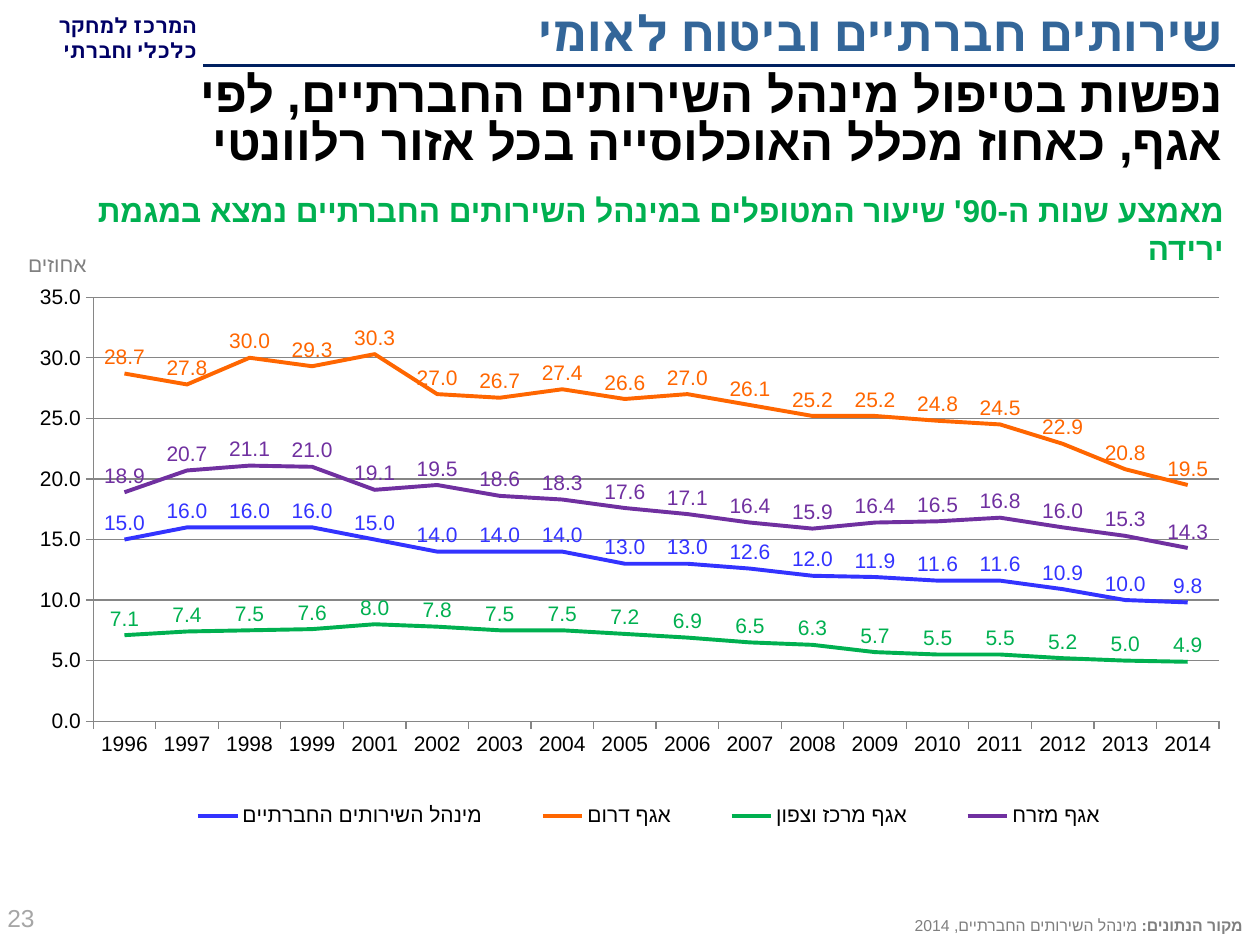
from lxml import etree
from pptx import Presentation
from pptx.chart.data import CategoryChartData
from pptx.dml.color import RGBColor
from pptx.enum.chart import XL_CHART_TYPE, XL_LABEL_POSITION, XL_LEGEND_POSITION, XL_TICK_MARK
from pptx.enum.shapes import MSO_CONNECTOR
from pptx.enum.text import MSO_ANCHOR, PP_ALIGN
from pptx.oxml.ns import qn
from pptx.util import Inches, Pt

LINE_CHART = XL_CHART_TYPE.LINE
LABEL_ABOVE = XL_LABEL_POSITION.ABOVE
LEGEND_BOTTOM = XL_LEGEND_POSITION.BOTTOM
TICK_OUTSIDE = XL_TICK_MARK.OUTSIDE
STRAIGHT = MSO_CONNECTOR.STRAIGHT
TOP, MIDDLE = MSO_ANCHOR.TOP, MSO_ANCHOR.MIDDLE
LEFT, CENTER, RIGHT = PP_ALIGN.LEFT, PP_ALIGN.CENTER, PP_ALIGN.RIGHT

YEARS = [str(year) for year in range(1996, 2015) if year != 2000]
SERIES = [
    ("מינהל השירותים החברתיים", "3333FF",
     [15, 16, 16, 16, 15, 14, 14, 14, 13, 13, 12.6, 12, 11.9, 11.6, 11.6, 10.9, 10, 9.8]),
    ("אגף דרום", "FF6600",
     [28.7, 27.8, 30, 29.3, 30.3, 27, 26.7, 27.4, 26.6, 27, 26.1, 25.2, 25.2, 24.8, 24.5,
      22.9, 20.8, 19.5]),
    ("אגף מרכז וצפון", "00B050",
     [7.1, 7.4, 7.5, 7.6, 8, 7.8, 7.5, 7.5, 7.2, 6.9, 6.5, 6.3, 5.7, 5.5, 5.5, 5.2, 5, 4.9]),
    ("אגף מזרח", "7030A0",
     [18.9, 20.7, 21.1, 21, 19.1, 19.5, 18.6, 18.3, 17.6, 17.1, 16.4, 15.9, 16.4, 16.5, 16.8,
      16, 15.3, 14.3]),
]


def color(value):
    return RGBColor.from_string(value)


def style_font(font, size, value, name="Arial", bold=False):
    font.name = name
    font.size = Pt(size)
    font.bold = bold
    font.color.rgb = color(value)


def add_complex_font(properties, name):
    etree.SubElement(properties, qn("a:cs")).set("typeface", name)


def add_text(slide, box, paragraphs, size, value, name="Arial", bold=False,
             align=RIGHT, anchor=TOP, line_spacing=None):
    shape = slide.shapes.add_textbox(*map(Inches, box))
    frame = shape.text_frame
    frame.word_wrap = True
    frame.vertical_anchor = anchor
    for index, runs in enumerate(paragraphs):
        paragraph = frame.add_paragraph() if index else frame.paragraphs[0]
        paragraph.alignment = align
        paragraph._p.get_or_add_pPr().set("rtl", "1")
        if line_spacing:
            paragraph.line_spacing = Pt(line_spacing)
        for text, run_bold in runs:
            run = paragraph.add_run()
            run.text = text
            style_font(run.font, size, value, name, run_bold or bold)
            add_complex_font(run._r.get_or_add_rPr(), name)
    return shape


def add_header(slide, box):
    left, top, width, height = box
    add_text(slide, (left - 0.15, top + 0.05, 1.81, 0.51),
             [[("המרכז למחקר", True)], [("כלכלי וחברתי", True)]], 12, "000066", "Roboto")
    rule = slide.shapes.add_connector(
        STRAIGHT, Inches(left + width), Inches(top + height),
        Inches(left + 1.61), Inches(top + height))
    rule.line.color.rgb = color("002060")
    rule.line.width = Pt(2.25)
    etree.SubElement(rule._element.spPr, qn("a:effectLst"))
    add_text(slide, (left + 1.58, top - 0.03, width - 1.58, 0.55),
             [[("שירותים חברתיים וביטוח לאומי", True)]], 28, "336699", "Roboto")


def add_headings(slide, box):
    left, top, width, height = box
    add_text(slide, (left + 0.79, top, width - 0.8, 0.99),
             [[("נפשות בטיפול מינהל השירותים החברתיים, לפי אגף, "
                "כאחוז מכלל האוכלוסייה בכל אזור רלוונטי", True)]],
             28, "000000", line_spacing=27)
    add_text(slide, (left, top + 0.92, width, height - 0.92),
             [[("מאמצע שנות ה-90' שיעור המטופלים במינהל השירותים החברתיים נמצא במגמת ירידה",
                True)]], 18, "00B050")


def set_layout(element, before, inner, **fractions):
    for existing in element.findall(qn("c:layout")):
        element.remove(existing)
    layout = etree.Element(qn("c:layout"))
    manual = etree.SubElement(layout, qn("c:manualLayout"))
    settings = {"layoutTarget": "inner"} if inner else {}
    settings.update({"xMode": "edge", "yMode": "edge"}, **fractions)
    for tag, value in settings.items():
        etree.SubElement(manual, qn(f"c:{tag}")).set("val", str(value))
    element.find(qn(before)).addprevious(layout)


def style_axis(axis):
    axis.major_tick_mark = TICK_OUTSIDE
    axis.format.line.color.rgb = color("868686")
    axis.format.line.width = Pt(0.75)
    style_font(axis.tick_labels.font, 12, "000000")


def add_line_chart(slide, box):
    left, top, width, height = box
    data = CategoryChartData(number_format="0.0")
    data.categories = YEARS
    for name, _, values in SERIES:
        data.add_series(name, values)
    chart = slide.shapes.add_chart(LINE_CHART, *map(Inches, box), data).chart
    chart.has_title = False
    style_font(chart.font, 12, "000000")

    style_axis(chart.category_axis)
    axis = chart.value_axis
    style_axis(axis)
    axis.minimum_scale, axis.maximum_scale, axis.major_unit = 0, 35, 5
    axis.tick_labels.number_format = "0.0"
    axis.tick_labels.number_format_is_linked = False
    axis.has_major_gridlines = True
    axis.major_gridlines.format.line.color.rgb = color("868686")
    axis.major_gridlines.format.line.width = Pt(0.75)

    for series, (_, value, _) in zip(chart.plots[0].series, SERIES):
        series.smooth = False
        series.format.line.color.rgb = color(value)
        series.format.line.width = Pt(2.25)
        labels = series.data_labels
        labels.show_value = True
        labels.position = LABEL_ABOVE
        labels.number_format = "0.0"
        labels.number_format_is_linked = False
        style_font(labels.font, 12, value)

    chart.has_legend = True
    legend = chart.legend
    legend.position = LEGEND_BOTTOM
    legend.include_in_layout = False
    style_font(legend.font, 12, "000000")
    for properties in chart._chartSpace.iter(qn("a:defRPr")):
        add_complex_font(properties, "Arial")
    plot_area = chart._chartSpace.chart.plotArea
    set_layout(plot_area, "c:lineChart", True, x=0.058, y=0.038, w=0.926, h=0.713)
    set_layout(legend._element, "c:overlay", False, x=0.1, y=0.87, w=0.83, h=0.08)
    add_text(slide, (left - 0.18, top - 0.23, 0.91, 0.3),
             [[("אחוזים", False)]], 12, "808080", align=CENTER)


def add_footer(slide, box):
    left, top, width, height = box
    add_text(slide, (left - 0.04, top, 2.33, height), [[("23", False)]],
             14, "A6A6A6", align=LEFT, anchor=MIDDLE)
    add_text(slide, (left + 2.48, top + 0.16, width - 2.52, 0.24),
             [[("מקור הנתונים: ", True), ("מינהל השירותים החברתיים, 2014", False)]],
             9, "7F7F7F", anchor=MIDDLE)


def main():
    presentation = Presentation()
    presentation.slide_width = Inches(10)
    presentation.slide_height = Inches(7.5)
    slide = presentation.slides.add_slide(presentation.slide_layouts[6])
    add_header(slide, (0, 0, 9.8, 0.52))
    add_headings(slide, (0.12, 0.55, 9.69, 1.47))
    add_line_chart(slide, (0.18, 2.18, 9.65, 4.72))
    add_footer(slide, (0, 7.06, 10, 0.44))
    presentation.save("out.pptx")


if __name__ == "__main__":
    main()
